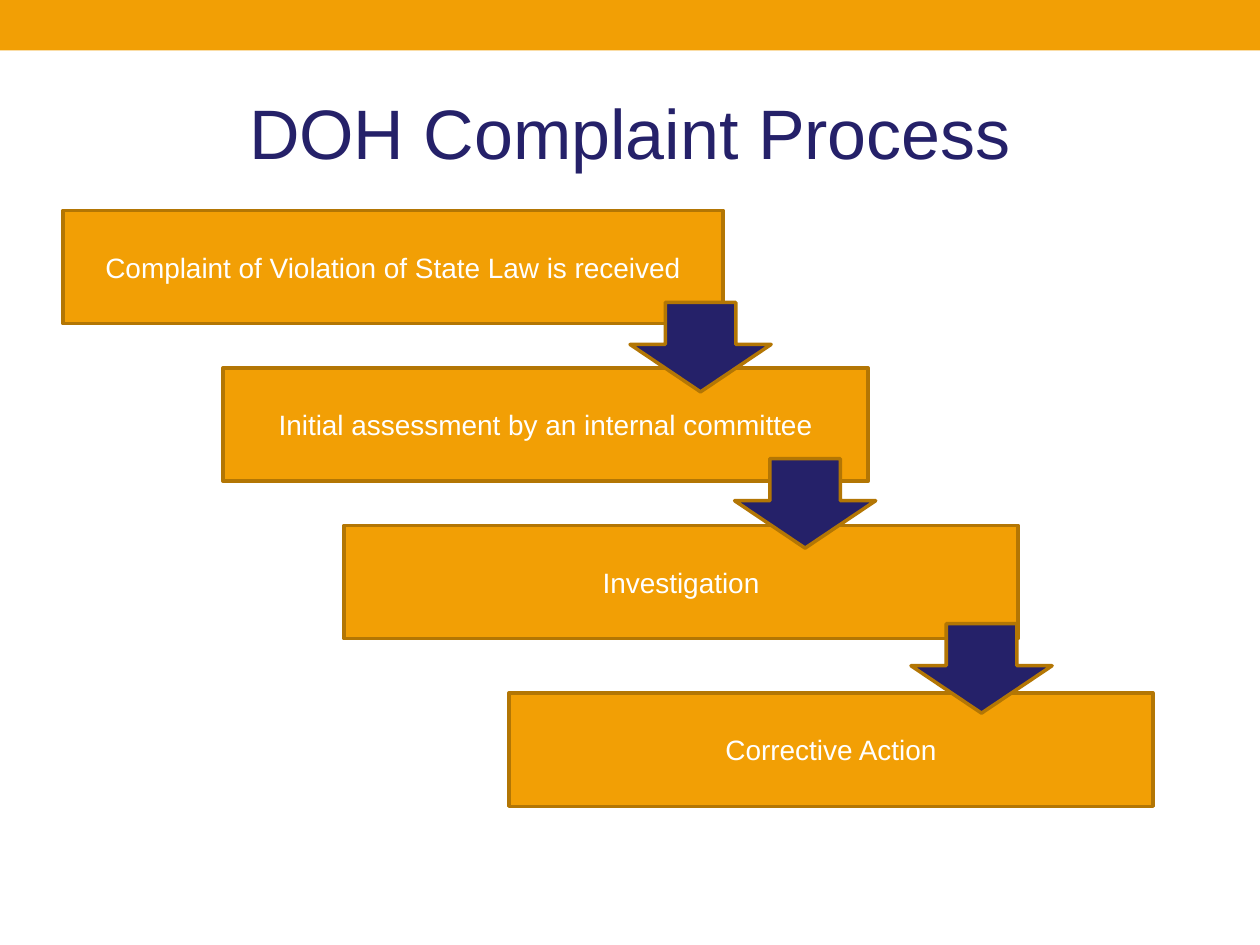
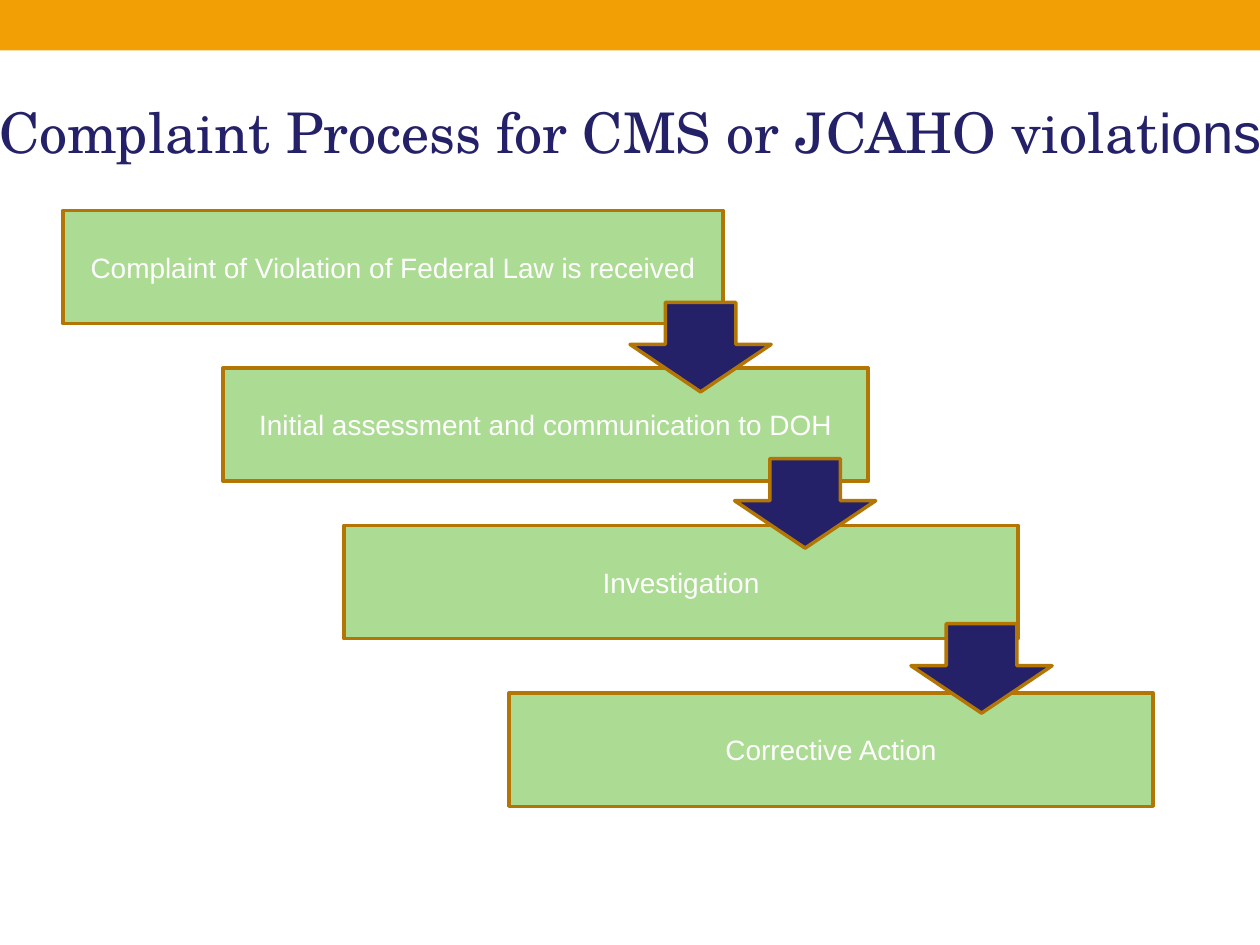
from dataclasses import dataclass
from typing import NamedTuple

from pptx import Presentation
from pptx.dml.color import RGBColor
from pptx.enum.shapes import MSO_SHAPE
from pptx.enum.text import MSO_ANCHOR, MSO_AUTO_SIZE, PP_ALIGN
from pptx.shapes.autoshape import Shape
from pptx.slide import Slide
from pptx.text.text import TextFrame
from pptx.util import Emu, Pt

EMU_PER_PX = 9144
TITLE_ONLY = 5


def px(length: int) -> Emu:
    """Turn px, at 100 to the inch, into EMU."""
    return Emu(length * EMU_PER_PX)


@dataclass(frozen=True)
class Theme:
    """Colours, fonts and type sizes shared by the slides."""

    orange: RGBColor = RGBColor(0xF2, 0x9F, 0x05)
    green: RGBColor = RGBColor(0xAC, 0xDB, 0x93)
    navy: RGBColor = RGBColor(0x25, 0x21, 0x69)
    outline: RGBColor = RGBColor(0xB3, 0x76, 0x04)
    white: RGBColor = RGBColor(0xFF, 0xFF, 0xFF)
    sans: str = "Arial"
    serif: str = "TeX Gyre Schola"
    title_size: int = 40
    long_title_size: int = 32
    step_size: int = 16
    outline_width: int = 2


THEME = Theme()


class Area(NamedTuple):
    """A rectangle in px."""

    left: int
    top: int
    width: int
    height: int


class Span(NamedTuple):
    """A piece of text in one font."""

    text: str
    font: str


@dataclass(frozen=True)
class Process:
    """One slide: its title and the steps that cascade below it."""

    title: tuple[Span, ...]
    title_size: int
    title_area: Area
    step_fill: RGBColor
    steps: tuple[str, ...]


BAND = Area(0, 0, 1000, 40)
STEP_AREAS = tuple(
    Area(left, top, width, 90)
    for left, top, width in ((50, 167, 524), (177, 292, 512), (273, 417, 535), (404, 550, 511))
)
ARROW_AREAS = tuple(Area(left, top, 112, 71) for left, top in ((500, 240), (583, 364), (723, 495)))
ARROW_ADJUSTMENTS = (0.5, 0.53)

PROCESSES = (
    Process(
        title=(Span("DOH Complaint Process", THEME.sans),),
        title_size=THEME.title_size,
        title_area=Area(50, 50, 900, 108),
        step_fill=THEME.orange,
        steps=(
            "Complaint of Violation of State Law is received",
            "Initial assessment by an internal committee",
            "Investigation",
            "Corrective Action",
        ),
    ),
    Process(
        title=(
            Span("Complaint Process for CMS or JCAHO violat", THEME.serif),
            Span("ions", THEME.sans),
        ),
        title_size=THEME.long_title_size,
        title_area=Area(-48, 50, 1097, 108),
        step_fill=THEME.green,
        steps=(
            "Complaint of Violation of Federal Law is received",
            "Initial assessment and communication to DOH",
            "Investigation",
            "Corrective Action",
        ),
    ),
)


def write(frame: TextFrame, spans: tuple[Span, ...], size: int, color: RGBColor) -> None:
    """Write one centred line of text, run by run."""
    frame.word_wrap = True
    frame.auto_size = MSO_AUTO_SIZE.NONE
    frame.vertical_anchor = MSO_ANCHOR.MIDDLE
    para = frame.paragraphs[0]
    para.alignment = PP_ALIGN.CENTER
    for span in spans:
        run = para.add_run()
        run.text = span.text
        run.font.name = span.font
        run.font.size = Pt(size)
        run.font.color.rgb = color


def add_block(
    page: Slide, kind: MSO_SHAPE, area: Area, fill: RGBColor, outlined: bool = True
) -> Shape:
    """Add a flat filled shape, with or without the shared outline."""
    block = page.shapes.add_shape(kind, *map(px, area))
    block.shadow.inherit = False
    block.fill.solid()
    block.fill.fore_color.rgb = fill
    if outlined:
        block.line.color.rgb = THEME.outline
        block.line.width = Pt(THEME.outline_width)
    else:
        block.line.fill.background()
    return block


def set_title(page: Slide, process: Process) -> None:
    """Place and fill the title placeholder."""
    title = page.shapes.title
    title.left, title.top, title.width, title.height = map(px, process.title_area)
    frame = title.text_frame
    frame.margin_left = frame.margin_right = px(10)
    frame.margin_top = frame.margin_bottom = px(10)
    write(frame, process.title, process.title_size, THEME.navy)


def add_step(page: Slide, area: Area, text: str, fill: RGBColor) -> None:
    """Add one labelled step box."""
    box = add_block(page, MSO_SHAPE.RECTANGLE, area, fill)
    write(box.text_frame, (Span(text, THEME.sans),), THEME.step_size, THEME.white)


def add_arrow(page: Slide, area: Area) -> None:
    """Add one arrow leading down to the next step."""
    arrow = add_block(page, MSO_SHAPE.DOWN_ARROW, area, THEME.navy)
    for index, value in enumerate(ARROW_ADJUSTMENTS):
        arrow.adjustments[index] = value


def main() -> None:
    """Build and save the deck."""
    deck = Presentation()
    deck.slide_width, deck.slide_height = px(1000), px(750)
    for process in PROCESSES:
        page = deck.slides.add_slide(deck.slide_layouts[TITLE_ONLY])
        add_block(page, MSO_SHAPE.RECTANGLE, BAND, THEME.orange, outlined=False)
        set_title(page, process)
        for area, text in zip(STEP_AREAS, process.steps):
            add_step(page, area, text, process.step_fill)
        for area in ARROW_AREAS:
            add_arrow(page, area)
    deck.save("out.pptx")


if __name__ == "__main__":
    main()
